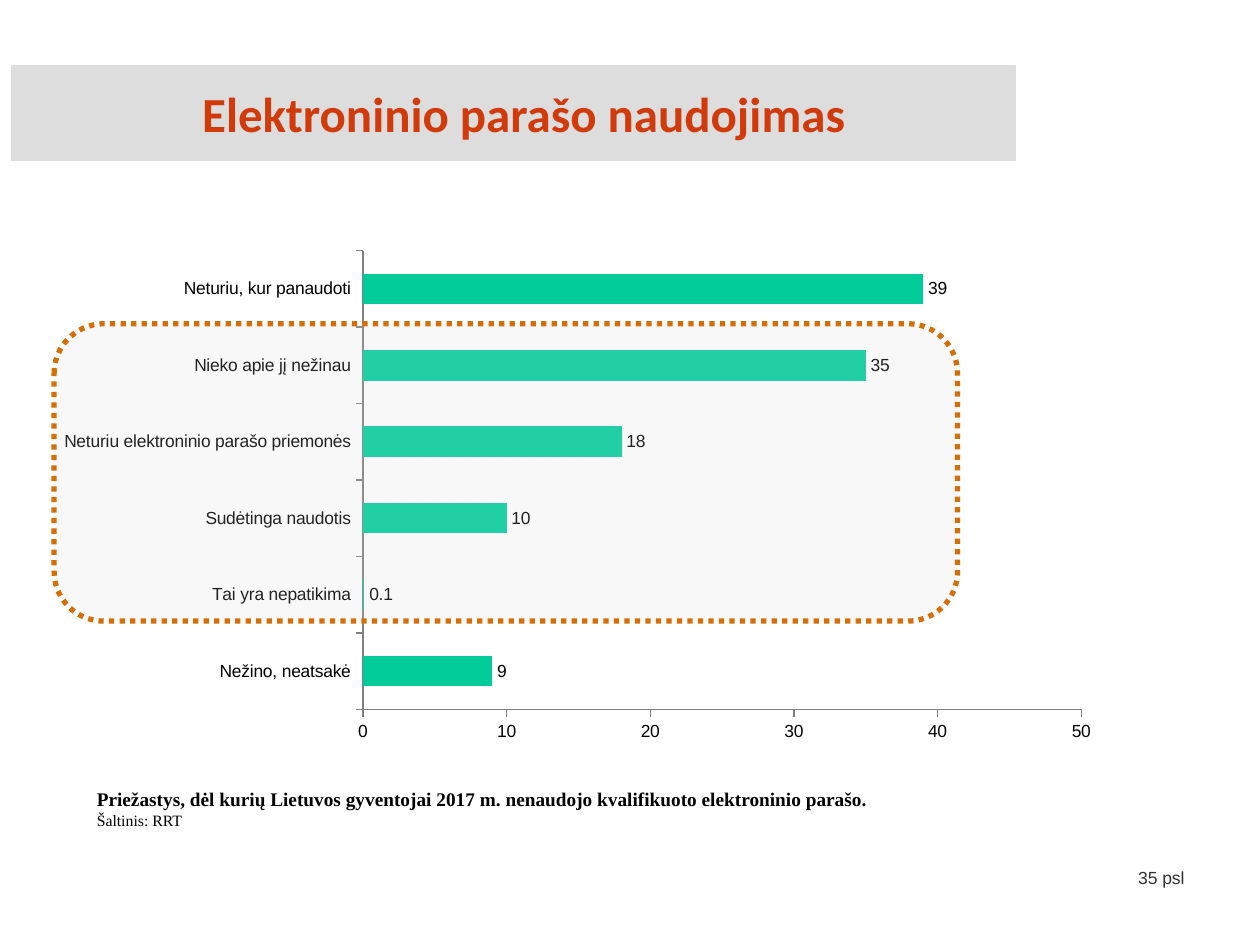
from dataclasses import dataclass

from lxml.etree import SubElement
from pptx import Presentation
from pptx.chart.data import CategoryChartData
from pptx.dml.color import RGBColor
from pptx.enum.chart import XL_CHART_TYPE as ChartType
from pptx.enum.chart import XL_LABEL_POSITION as LabelPosition
from pptx.enum.chart import XL_TICK_MARK as TickMark
from pptx.enum.dml import MSO_LINE_DASH_STYLE as Dash
from pptx.enum.shapes import MSO_SHAPE as Shape
from pptx.enum.text import MSO_ANCHOR as Anchor
from pptx.enum.text import PP_ALIGN as Align
from pptx.oxml import parse_xml
from pptx.oxml.ns import nsdecls, qn
from pptx.util import Inches, Pt


@dataclass(frozen=True)
class Theme:
    """Colours, fonts and type sizes of the slide."""
    band: str = "DDDDDD"
    heading: str = "D13A0B"
    ink: str = "000000"
    muted: str = "323232"
    bar: str = "00CC99"
    axis: str = "808080"
    veil: str = "D9D9D9"
    outline: str = "D56E07"
    heading_font: str = "Calibri"
    body_font: str = "Arial"
    caption_font: str = "Times New Roman"
    heading_size: int = 28
    body_size: int = 10
    caption_size: int = 11
    source_size: int = 9


THEME = Theme()
REASONS = {
    "Nežino, neatsakė": 9,
    "Tai yra nepatikima": 0.1,
    "Sudėtinga naudotis": 10,
    "Neturiu elektroninio parašo priemonės": 18,
    "Nieko apie jį nežinau": 35,
    "Neturiu, kur panaudoti": 39,
}


def rgb(code):
    """Turn a hex code into a colour."""
    return RGBColor.from_string(code)


def style(font, name, size, colour, bold=False):
    """Set the face, size, colour and weight of a font."""
    font.name, font.size, font.bold = name, Pt(size), bold
    font.color.rgb = rgb(colour)


def add_heading(slide, box):
    """Place the heading centred on its grey band."""
    band = slide.shapes.add_shape(Shape.RECTANGLE, *map(Inches, box))
    band.shadow.inherit = False
    band.fill.solid()
    band.fill.fore_color.rgb = rgb(THEME.band)
    band.line.color.rgb = rgb(THEME.band)
    band.line.width = Pt(0.75)
    frame = band.text_frame
    frame.margin_left, frame.margin_right = Inches(0.16), 0
    frame.vertical_anchor = Anchor.MIDDLE
    frame.text = "Elektroninio parašo naudojimas"
    heading = frame.paragraphs[0]
    heading.alignment = Align.CENTER
    style(heading.runs[0].font, THEME.heading_font, THEME.heading_size, THEME.heading, True)


def set_plot_area(chart, x, y, w, h):
    """Fix the inner plot area as fractions of the chart."""
    plot_area = chart.plots[0]._element.getparent()
    for old in plot_area.findall(qn("c:layout")):
        plot_area.remove(old)
    values = (("layoutTarget", "inner"), ("xMode", "edge"), ("yMode", "edge"),
              ("x", x), ("y", y), ("w", w), ("h", h))
    layout = parse_xml(f"<c:layout {nsdecls('c')}><c:manualLayout/></c:layout>")
    for tag, value in values:
        SubElement(layout[0], qn(f"c:{tag}")).set("val", str(value))
    plot_area.insert(0, layout)


def add_reasons_chart(slide, box):
    """Place the bar chart of reasons."""
    reasons = CategoryChartData(number_format="General")
    reasons.categories = list(REASONS)
    reasons.add_series("Series 1", list(REASONS.values()))
    chart = slide.shapes.add_chart(ChartType.BAR_CLUSTERED, *map(Inches, box), reasons).chart
    chart.has_legend = chart.has_title = False
    style(chart.font, THEME.body_font, THEME.body_size, THEME.ink)
    set_plot_area(chart, 0.28, 0.13, 0.69, 0.79)

    for axis in (chart.category_axis, chart.value_axis):
        axis.has_major_gridlines = False
        axis.major_tick_mark, axis.minor_tick_mark = TickMark.OUTSIDE, TickMark.NONE
        axis.format.line.color.rgb = rgb(THEME.axis)
        axis.format.line.width = Pt(0.75)
    scale = chart.value_axis
    scale.minimum_scale, scale.maximum_scale, scale.major_unit = 0, 50, 10

    bars = chart.plots[0]
    bars.gap_width, bars.vary_by_categories = 150, False
    bars.series[0].format.fill.solid()
    bars.series[0].format.fill.fore_color.rgb = rgb(THEME.bar)
    bars.has_data_labels = True
    bars.data_labels.show_value = True
    bars.data_labels.position = LabelPosition.OUTSIDE_END
    style(bars.data_labels.font, THEME.body_font, THEME.body_size, THEME.ink)


def add_highlight(slide, box):
    """Place the translucent dotted frame around the middle bars."""
    frame = slide.shapes.add_shape(Shape.ROUNDED_RECTANGLE, *map(Inches, box))
    frame.shadow.inherit = False
    frame.fill.solid()
    frame.fill.fore_color.rgb = rgb(THEME.veil)
    veil = frame._element.spPr.find(qn("a:solidFill"))[0]
    SubElement(veil, qn("a:alpha")).set("val", "16000")
    frame.line.color.rgb = rgb(THEME.outline)
    frame.line.width = Pt(3)
    frame.line.dash_style = Dash.ROUND_DOT


def add_caption(slide, box):
    """Place the chart caption and its source."""
    frame = slide.shapes.add_textbox(*map(Inches, box)).text_frame
    frame.word_wrap = True
    frame.text = ("Priežastys, dėl kurių Lietuvos gyventojai 2017 m. nenaudojo "
                  "kvalifikuoto elektroninio parašo.\nŠaltinis: RRT")
    caption, source = frame.paragraphs
    style(caption.runs[0].font, THEME.caption_font, THEME.caption_size, THEME.ink, True)
    style(source.runs[0].font, THEME.caption_font, THEME.source_size, THEME.ink)


def add_page_number(slide, box):
    """Place the page number at the lower right."""
    frame = slide.shapes.add_textbox(*map(Inches, box)).text_frame
    frame.word_wrap = True
    frame.text = "35 psl"
    page = frame.paragraphs[0]
    page.alignment = Align.RIGHT
    style(page.runs[0].font, THEME.body_font, THEME.body_size, THEME.muted)


def main():
    """Build and save the slide."""
    deck = Presentation()
    deck.slide_width, deck.slide_height = Inches(10), Inches(7.5)
    slide = deck.slides.add_slide(deck.slide_layouts[6])
    add_page_number(slide, (8.83, 6.83, 0.67, 0.25))
    add_heading(slide, (0.09, 0.52, 7.97, 0.75))
    add_caption(slide, (0.67, 6.2, 8.43, 0.44))
    add_reasons_chart(slide, (0.51, 1.39, 8.32, 4.61))
    add_highlight(slide, (0.43, 2.57, 7.17, 2.36))
    deck.save("out.pptx")


if __name__ == "__main__":
    main()
